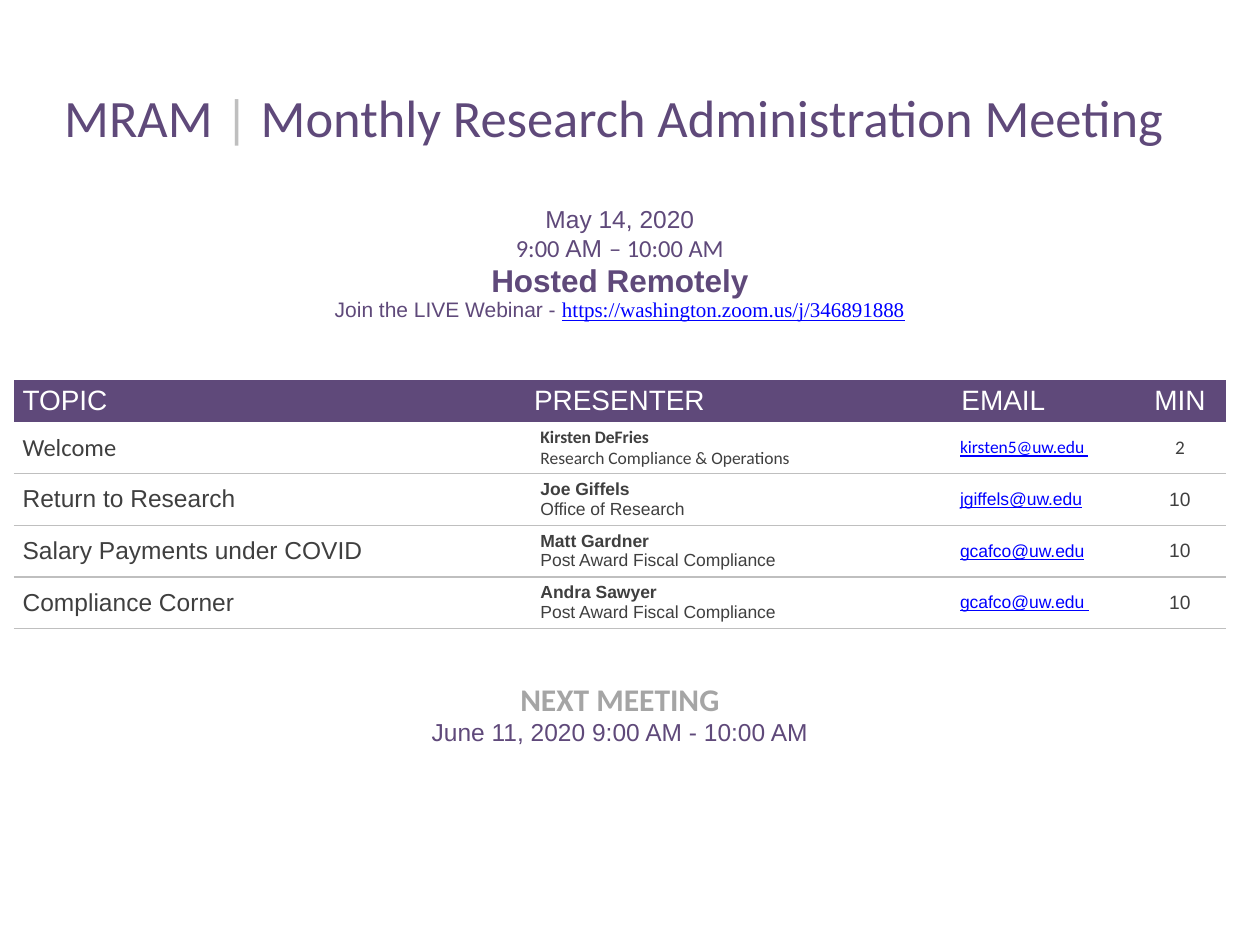
from typing import NamedTuple

from lxml import etree
from pptx import Presentation
from pptx.dml.color import RGBColor
from pptx.enum.text import MSO_ANCHOR, PP_ALIGN
from pptx.oxml.ns import qn
from pptx.util import Inches, Pt

LEFT, CENTER = PP_ALIGN.LEFT, PP_ALIGN.CENTER
MIDDLE, BOTTOM = MSO_ANCHOR.MIDDLE, MSO_ANCHOR.BOTTOM

PURPLE = RGBColor(0x5F, 0x49, 0x7A)
RULE_GRAY = RGBColor(0xBF, 0xBF, 0xBF)
LABEL_GRAY = RGBColor(0xA5, 0xA5, 0xA5)
TEXT_GRAY = RGBColor(0x3F, 0x3F, 0x3F)
LINK_BLUE = RGBColor(0x00, 0x00, 0xFF)
WHITE = RGBColor(0xFF, 0xFF, 0xFF)

ARIAL, CALIBRI, TIMES = "Arial", "Calibri", "Times New Roman"
COLUMN_WIDTHS = [4.06, 3.33, 1.5, 0.73]
TITLE_HEIGHT, DETAILS_HEIGHT, HEADER_HEIGHT = 0.62, 1.82, 0.33
TOPIC_HEIGHT, NEXT_HEIGHT = 0.41, 0.94


class Span(NamedTuple):
    text: str
    size: float
    name: str = ARIAL
    color: RGBColor = PURPLE
    bold: bool = False
    underline: bool = False


class Topic(NamedTuple):
    title: str
    presenter: str
    office: str
    email: str
    minutes: str
    name: str = ARIAL
    underlined_gap: bool = False


class CellStyle(NamedTuple):
    align: PP_ALIGN = LEFT
    anchor: MSO_ANCHOR = MIDDLE
    fill: RGBColor = WHITE
    left: float = 0.07
    right: float = 0.07
    bottom: float = 0
    top_rule: bool = False
    bottom_rule: bool = False


TITLE = [[
    Span("MRAM ", 30, CALIBRI),
    Span("|", 30, CALIBRI, RULE_GRAY),
    Span(" Monthly Research Administration Meeting ", 30, CALIBRI),
]]
DETAILS = [
    [Span("May 14, 2020", 14)],
    [Span("9:00 ", 14, CALIBRI), Span("AM ", 14), Span("– 10:00 AM", 14, CALIBRI)],
    [Span("Hosted Remotely", 18, bold=True)],
    [
        Span("Join the LIVE Webinar - ", 12),
        Span("https://washington.zoom.us/j/346891888", 12, TIMES, LINK_BLUE, underline=True),
    ],
]
HEADERS = [("TOPIC", LEFT), ("PRESENTER", LEFT), (" EMAIL", LEFT), ("MIN", CENTER)]
TOPICS = [
    Topic("Welcome", "Kirsten DeFries", "Research Compliance & Operations",
          "kirsten5@uw.edu", "2", CALIBRI, True),
    Topic("Return to Research", "Joe Giffels", "Office of Research", "jgiffels@uw.edu", "10"),
    Topic("Salary Payments under COVID", "Matt Gardner", "Post Award Fiscal Compliance",
          "gcafco@uw.edu", "10"),
    Topic("Compliance Corner", "Andra Sawyer", "Post Award Fiscal Compliance",
          "gcafco@uw.edu", "10", underlined_gap=True),
]
NEXT_MEETING = [
    [Span("NEXT MEETING", 18, CALIBRI, LABEL_GRAY, bold=True)],
    [Span("June 11, 2020 9:00 AM - 10:00 AM", 14)],
]


def set_borders(cell, top_rule: bool, bottom_rule: bool) -> None:
    properties = cell._tc.get_or_add_tcPr()
    sides = {"a:lnL": False, "a:lnR": False, "a:lnT": top_rule, "a:lnB": bottom_rule}
    for position, (tag, ruled) in enumerate(sides.items()):
        line = etree.Element(qn(tag), w=str(Pt(1)))
        if ruled:
            fill = etree.SubElement(line, qn("a:solidFill"))
            etree.SubElement(fill, qn("a:srgbClr"), val=str(RULE_GRAY))
        else:
            etree.SubElement(line, qn("a:noFill"))
        properties.insert(position, line)


def fill_cell(cell, lines: list[list[Span]], style: CellStyle) -> None:
    cell.fill.solid()
    cell.fill.fore_color.rgb = style.fill
    layout = {
        "margin_left": Inches(style.left),
        "margin_right": Inches(style.right),
        "margin_top": 0,
        "margin_bottom": Inches(style.bottom),
        "vertical_anchor": style.anchor,
    }
    for attribute, value in layout.items():
        setattr(cell, attribute, value)
    set_borders(cell, style.top_rule, style.bottom_rule)
    frame = cell.text_frame
    for index, spans in enumerate(lines):
        para = frame.add_paragraph() if index else frame.paragraphs[0]
        para.alignment = style.align
        for span in spans:
            run = para.add_run()
            run.text = span.text
            formats = {"size": Pt(span.size), "name": span.name,
                       "bold": span.bold, "underline": span.underline}
            for attribute, value in formats.items():
                setattr(run.font, attribute, value)
            run.font.color.rgb = span.color


def fill_wide_row(table, row: int, lines: list[list[Span]], style: CellStyle) -> None:
    table.cell(row, 0).merge(table.cell(row, len(COLUMN_WIDTHS) - 1))
    fill_cell(table.cell(row, 0), lines, style)


def fill_topic_row(table, row: int, topic: Topic) -> None:
    plain = CellStyle(top_rule=row > 3, bottom_rule=True)
    padded = plain._replace(left=0.12, right=0.12)
    body = Span("", 10, topic.name, TEXT_GRAY)
    link = body._replace(color=LINK_BLUE, underline=True)
    cells = [
        ([[body._replace(text=topic.title, size=14)]], plain),
        ([[body._replace(text=topic.presenter, bold=True)],
          [body._replace(text=topic.office)]], padded),
        ([[link._replace(text=topic.email),
           link._replace(text=" ", underline=topic.underlined_gap)]], padded),
        ([[body._replace(text=topic.minutes, size=11)]], plain._replace(align=CENTER)),
    ]
    for column, (lines, style) in enumerate(cells):
        fill_cell(table.cell(row, column), lines, style)


def main() -> None:
    deck = Presentation()
    deck.slide_width, deck.slide_height = Inches(10), Inches(7.5)
    page = deck.slides.add_slide(deck.slide_layouts[6])

    heights = [TITLE_HEIGHT, DETAILS_HEIGHT, HEADER_HEIGHT,
               *[TOPIC_HEIGHT] * len(TOPICS), NEXT_HEIGHT]
    table = page.shapes.add_table(
        len(heights), len(COLUMN_WIDTHS), Inches(0.11), Inches(0.58),
        Inches(sum(COLUMN_WIDTHS)), Inches(sum(heights))).table
    table.first_row = table.horz_banding = False
    for column, width in zip(table.columns, COLUMN_WIDTHS):
        column.width = Inches(width)
    for row, height in zip(table.rows, heights):
        row.height = Inches(height)

    wide = CellStyle(CENTER, BOTTOM)
    fill_wide_row(table, 0, TITLE, wide)
    fill_wide_row(table, 1, DETAILS, wide._replace(bottom=0.46))
    for column, (label, align) in enumerate(HEADERS):
        fill_cell(table.cell(2, column), [[Span(label, 16, color=WHITE)]],
                  CellStyle(align, fill=PURPLE))
    for row, topic in enumerate(TOPICS, start=3):
        fill_topic_row(table, row, topic)
    fill_wide_row(table, len(heights) - 1, NEXT_MEETING, wide._replace(top_rule=True))

    deck.save("out.pptx")


if __name__ == "__main__":
    main()
